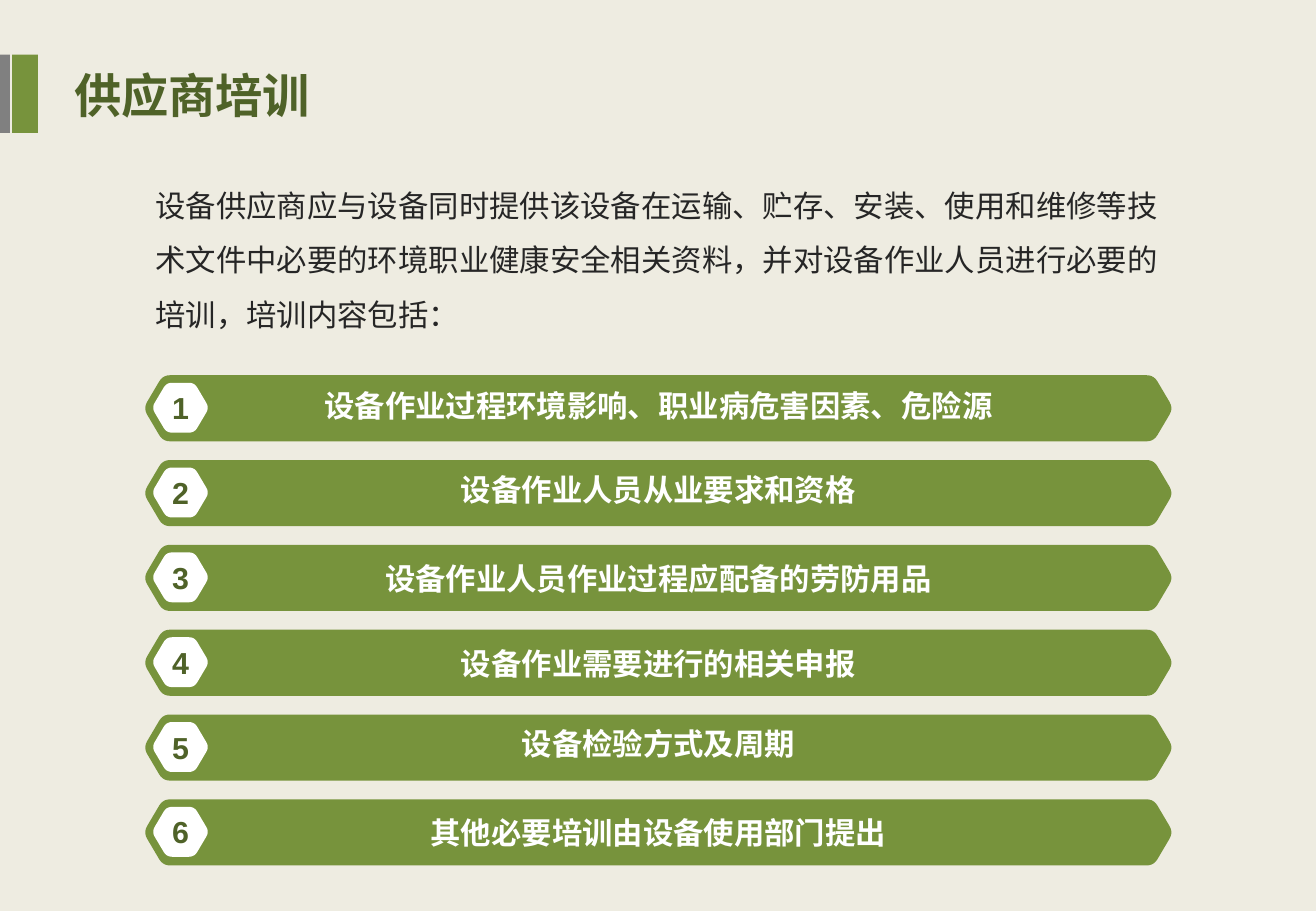
from math import hypot
from lxml.etree import SubElement
from pptx import Presentation
from pptx.dml.color import RGBColor
from pptx.enum.shapes import MSO_SHAPE
from pptx.enum.text import MSO_ANCHOR, MSO_AUTO_SIZE, PP_ALIGN
from pptx.oxml.ns import qn
from pptx.util import Pt

CREAM = RGBColor(0xEE, 0xEC, 0xE1)
GREEN = RGBColor(0x77, 0x93, 0x3C)
DARK_GREEN = RGBColor(0x4F, 0x62, 0x28)
GRAY = RGBColor(0x80, 0x80, 0x80)
INK = RGBColor(0x26, 0x26, 0x26)
WHITE = RGBColor(0xFF, 0xFF, 0xFF)

CJK = "Noto Sans CJK SC"
TITLE_FONT = {"name": CJK, "size": Pt(28), "bold": True}
BODY_FONT = {"name": CJK, "size": Pt(18), "bold": False}
ITEM_FONT = {"name": CJK, "size": Pt(18), "bold": True}
NUMBER_FONT = {"name": "Arial", "size": Pt(18), "bold": True}

TITLE = "供应商培训"
INTRO = ("设备供应商应与设备同时提供该设备在运输、贮存、安装、使用和维修等技术文件中必要的"
         "环境职业健康安全相关资料，并对设备作业人员进行必要的培训，培训内容包括：")
# Wording of each bar and the drop of its text box below the bar's top
ITEMS = [
    ("设备作业过程环境影响、职业病危害因素、危险源", 3.6),
    ("设备作业人员从业要求和资格", 3),
    ("设备作业人员作业过程应配备的劳防用品", 5.3),
    ("设备作业需要进行的相关申报", 5.5),
    ("设备检验方式及周期", 2.7),
    ("其他必要培训由设备使用部门提出", 5),
]


def write(tf, text, font, color, align=PP_ALIGN.LEFT):
    p = tf.paragraphs[0]
    p.alignment = align
    r = p.add_run()
    r.text = text
    for name, value in font.items():
        setattr(r.font, name, value)
    r.font.color.rgb = color
    # East Asian glyphs take their own font entry
    SubElement(r.font._element, qn("a:ea"), typeface=font["name"])
    return p


def paint(sp, color):
    sp.shadow.inherit = False
    sp.fill.solid()
    sp.fill.fore_color.rgb = color
    sp.line.fill.background()


def add_rounded_hexagon(slide, x, y, w, h, trim, color):
    """Hexagon with sides at 60 degrees, each corner rounded over trim points."""
    inset = 0.59 * h / 2
    corners = [(x + inset, y), (x + w - inset, y), (x + w, y + h / 2),
               (x + w - inset, y + h), (x + inset, y + h), (x, y + h / 2)]

    def toward(a, b):
        k = trim / hypot(b[0] - a[0], b[1] - a[1])
        return a[0] + k * (b[0] - a[0]), a[1] + k * (b[1] - a[1])

    points = []
    for i, corner in enumerate(corners):
        start = toward(corner, corners[i - 1])
        end = toward(corner, corners[(i + 1) % 6])
        for t in (0, 0.2, 0.4, 0.6, 0.8, 1):
            points.append(tuple(
                Pt((1 - t) ** 2 * a + 2 * t * (1 - t) * c + t ** 2 * b)
                for a, c, b in zip(start, corner, end)))
    builder = slide.shapes.build_freeform(*points[0])
    builder.add_line_segments(points[1:], close=True)
    sp = builder.convert_to_shape()
    paint(sp, color)
    return sp


def add_header(slide, x, y, w, h):
    # Two accent blocks at the slide's edge
    for left, width, color in ((x, 5.8, GRAY), (x + 7.2, 15.3, GREEN)):
        sp = slide.shapes.add_shape(MSO_SHAPE.RECTANGLE, Pt(left), Pt(y), Pt(width), Pt(h))
        paint(sp, color)
    # Title
    title = slide.shapes.title
    title.left, title.top = Pt(x + 36.7), Pt(y + 2.9)
    title.width, title.height = Pt(w - 36.7), Pt(41)
    tf = title.text_frame
    tf.auto_size = MSO_AUTO_SIZE.NONE
    tf.vertical_anchor = MSO_ANCHOR.MIDDLE
    write(tf, TITLE, TITLE_FONT, DARK_GREEN)


def add_intro(slide, x, y, w, h):
    tf = slide.shapes.add_textbox(Pt(x), Pt(y), Pt(w), Pt(h)).text_frame
    tf.word_wrap = True
    write(tf, INTRO, BODY_FONT, INK).line_spacing = 1.5


def add_item(slide, x, y, w, h, number, text, drop):
    # Bar
    add_rounded_hexagon(slide, x, y, w, h, 4.3, GREEN)
    # Numbered badge
    badge = add_rounded_hexagon(slide, x + 5, y + 4.5, 34, 29.6, 3.3, WHITE)
    tf = badge.text_frame
    tf.margin_left = tf.margin_right = tf.margin_top = tf.margin_bottom = 0
    tf.vertical_anchor = MSO_ANCHOR.MIDDLE
    write(tf, str(number), NUMBER_FONT, DARK_GREEN, PP_ALIGN.CENTER)
    # Wording, centred on the bar
    width = 18.2 * len(text) + 14.4
    box = slide.shapes.add_textbox(Pt(x + (w - width) / 2), Pt(y + drop), Pt(width), Pt(29))
    box.text_frame.word_wrap = False
    write(box.text_frame, text, ITEM_FONT, WHITE, PP_ALIGN.CENTER)


def add_items(slide, x, y, w, h):
    bar_h = 39.2
    pitch = (h - bar_h) / (len(ITEMS) - 1)
    for i, (text, drop) in enumerate(ITEMS):
        add_item(slide, x, y + i * pitch, w, bar_h, i + 1, text, drop)


def main():
    prs = Presentation()
    prs.slide_width, prs.slide_height = Pt(780), Pt(540)
    slide = prs.slides.add_slide(prs.slide_layouts[5])
    slide.background.fill.solid()
    slide.background.fill.fore_color.rgb = CREAM
    add_header(slide, 0, 32.4, 581, 46.4)
    add_intro(slide, 85, 96.5, 612.7, 105)
    add_items(slide, 85, 222.4, 610.4, 290.6)
    prs.save("out.pptx")


if __name__ == "__main__":
    main()
